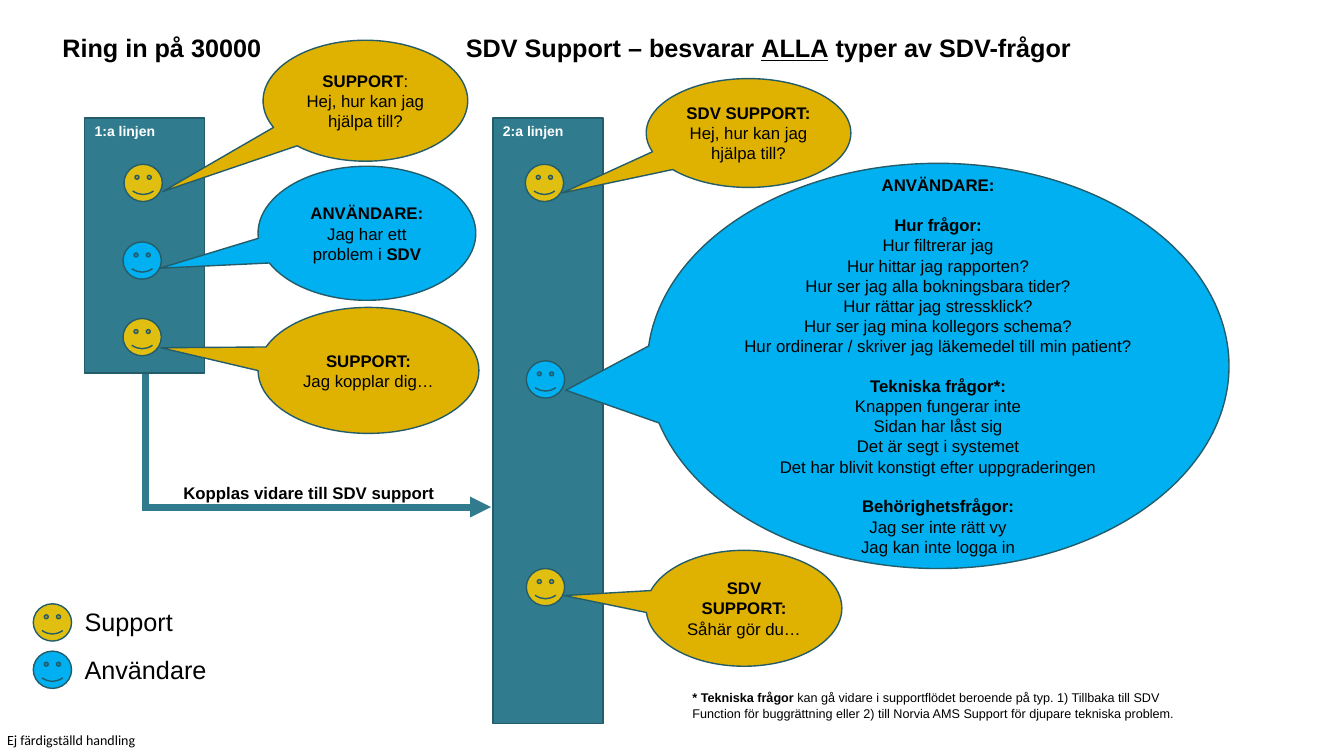
"""Build the slide showing how support calls pass from the first to the second line."""
from lxml import etree
from pptx import Presentation
from pptx import util as u
from pptx.dml.color import RGBColor
from pptx.enum import shapes, text
from pptx.oxml.ns import qn

PX = 9144
TEAL = RGBColor(0x30, 0x7C, 0x8E)
EDGE = RGBColor(0x24, 0x5C, 0x69)
GOLD = RGBColor(0xDF, 0xB2, 0x02)
FACE_GOLD = RGBColor(0xE0, 0xBF, 0x11)
BLUE = RGBColor(0x00, 0xB0, 0xF0)
BLACK = RGBColor(0, 0, 0)
WHITE = RGBColor(0xFF, 0xFF, 0xFF)
KIND = shapes.MSO_SHAPE
LEFT, CENTER = text.PP_ALIGN.LEFT, text.PP_ALIGN.CENTER
TOP, MIDDLE = text.MSO_ANCHOR.TOP, text.MSO_ANCHOR.MIDDLE


def write(tf, lines, size, color=BLACK, align=LEFT, anchor=TOP, wrap=True, font="Arial"):
    """Write lines whose parts between bars are bold; later bold headings get space above."""
    for name, value in {"word_wrap": wrap, "vertical_anchor": anchor,
                        "auto_size": text.MSO_AUTO_SIZE.NONE}.items():
        setattr(tf, name, value)
    for i, line in enumerate(lines):
        p = tf.add_paragraph() if i else tf.paragraphs[0]
        p.alignment = align
        if i and line.startswith("|"):
            p.space_before = u.Pt(14)
        for j, part in enumerate(line.split("|")):
            if part:
                r = p.add_run()
                r.text = part
                for name, value in {"name": font, "size": u.Pt(size), "bold": j % 2 == 1}.items():
                    setattr(r.font, name, value)
                r.font.color.rgb = color


def draw(kind, box, fill):
    """Draw a filled preset shape with the dark teal outline."""
    sp = s.shapes.add_shape(kind, *(v * PX for v in box))
    sp.shadow.inherit = False
    sp.fill.solid()
    sp.fill.fore_color.rgb = fill
    sp.line.color.rgb = EDGE
    sp.line.width = u.Pt(1)
    return sp


prs = Presentation()
prs.slide_width, prs.slide_height = 1333 * PX, 750 * PX
s = prs.slides.add_slide(prs.slide_layouts[5])

title = s.shapes.title
for name, value in zip(("left", "top", "width", "height"), (452, 27, 624, 40)):
    setattr(title, name, value * PX)
write(title.text_frame, ["|SDV Support – besvarar ||ALLA|| typer av SDV-frågor|"], 18, wrap=False)
title.text_frame.paragraphs[0].runs[1].font.underline = True

for box, label in [((84, 117, 119, 253), "|1:a linjen|"), ((489, 117, 109, 601), "|2:a linjen|")]:
    write(draw(KIND.RECTANGLE, box, TEAL).text_frame, [label], 10, WHITE)

for x1, y1, x2, y2, arrow in [(144, 371, 144, 504, False), (141, 503, 487, 503, True)]:
    cn = s.shapes.add_connector(shapes.MSO_CONNECTOR.STRAIGHT, x1 * PX, y1 * PX, x2 * PX, y2 * PX)
    cn.line.color.rgb = TEAL
    cn.line.width = u.Pt(5)
    if arrow:
        etree.SubElement(cn.line._get_or_add_ln(), qn("a:tailEnd"), type="triangle")
    etree.SubElement(cn._element.spPr, qn("a:effectLst"))

questions = [
    "|ANVÄNDARE:|",
    "|Hur frågor:|",
    "Hur filtrerar jag",
    "Hur hittar jag rapporten?",
    "Hur ser jag alla bokningsbara tider?",
    "Hur rättar jag stressklick?",
    "Hur ser jag mina kollegors schema?",
    "Hur ordinerar / skriver jag läkemedel till min patient?",
    "|Tekniska frågor*:|",
    "Knappen fungerar inte",
    "Sidan har låst sig",
    "Det är segt i systemet",
    "Det har blivit konstigt efter uppgraderingen",
    "|Behörighetsfrågor:|",
    "Jag ser inte rätt vy",
    "Jag kan inte logga in",
]
greeting = "Hej, hur kan jag hjälpa till?"
bubbles = [
    ((261, 40, 203, 120), (-0.99, 0.75), GOLD, ["|SUPPORT|:", greeting]),
    ((256, 165, 216, 133), (-0.95, 0.26), BLUE, ["|ANVÄNDARE:|", "Jag har ett problem i |SDV|"]),
    ((256, 305, 219, 125), (-0.94, -0.18), GOLD, ["|SUPPORT:|", "Jag kopplar dig…"]),
    ((641, 78, 203, 108), (-0.91, 0.55), GOLD, ["|SDV SUPPORT:|", greeting]),
    ((642, 162, 577, 402), (-0.64, 0.06), BLUE, questions),
    ((641, 546, 194, 115), (-0.92, -0.11), GOLD, ["|SDV SUPPORT:|", "Såhär gör du…"]),
]
for box, tip, fill, lines in bubbles:
    sp = draw(KIND.OVAL_CALLOUT, box, fill)
    for i, value in enumerate(tip):
        sp.adjustments[i] = value
    write(sp.text_frame, lines, 12, align=CENTER, anchor=MIDDLE)

faces = [
    (123, 163, FACE_GOLD), (122, 240, BLUE), (122, 316, FACE_GOLD),
    (521, 163, FACE_GOLD), (522, 358, BLUE), (522, 564, FACE_GOLD),
    (33, 599, FACE_GOLD), (33, 646, BLUE),
]
for x, y, fill in faces:
    draw(KIND.SMILEY_FACE, (x, y, 38, 37), fill)

labels = [
    ((52, 27, 219, 40), "|Ring in på 30000|", 18),
    ((172, 474, 277, 30), "|Kopplas vidare till SDV support|", 12),
    ((74, 597, 109, 40), "Support", 18),
    ((74, 644, 142, 40), "Användare", 18),
]
for box, label, size in labels:
    write(s.shapes.add_textbox(*(v * PX for v in box)).text_frame, [label], size, wrap=False)

note = s.shapes.add_textbox(677 * PX, 680 * PX, 506 * PX, 40 * PX)
write(note.text_frame, ["|* Tekniska frågor |kan gå vidare i supportflödet beroende på typ. 1) Tillbaka till SDV "
                        "Function för buggrättning eller 2) till Norvia AMS Support för djupare "
                        "tekniska problem."], 9)

status = s.shapes.add_textbox(7 * PX, 726 * PX, 131 * PX, 17 * PX)
for side in ("left", "top", "right", "bottom"):
    setattr(status.text_frame, "margin_" + side, 0)
write(status.text_frame, ["Ej färdigställd handling"], 10, wrap=False, font="Calibri")

prs.save("out.pptx")
